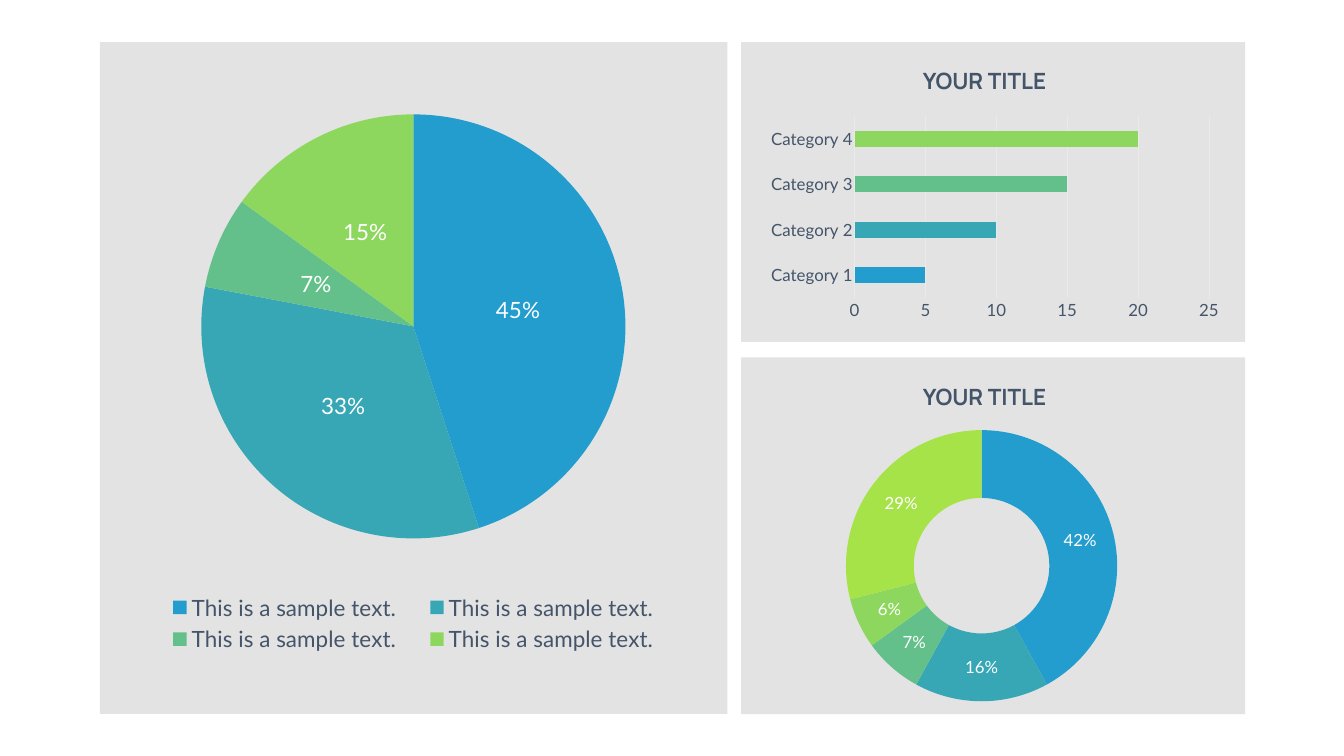
import dataclasses

import pptx
import pptx.chart.data
import pptx.dml.color
import pptx.enum.chart
import pptx.enum.shapes
import pptx.enum.text
import pptx.oxml
import pptx.oxml.ns
import pptx.util

Pt = pptx.util.Pt
RGB = pptx.dml.color.RGBColor.from_string
XL = pptx.enum.chart


@dataclasses.dataclass(frozen=True)
class Theme:
    panel: str = "E3E3E3"
    text: str = "445469"
    label: str = "FFFFFF"
    grid: str = "EAEAEA"
    series: tuple = ("229DCE", "37A7B6", "63C08A", "8ED75E", "A5E348")
    body: str = "Lato"
    heading: str = "Manrope"
    large: int = 32
    small: int = 24


theme = Theme()


def style_font(font, size, color, name=theme.body, bold=False):
    values = {"size": Pt(size), "name": name, "bold": bold}
    for attribute, value in values.items():
        setattr(font, attribute, value)
    font.color.rgb = RGB(color)


def set_layout(parent, index, bounds, target=""):
    """Fix a plot area or legend at x, y, w, h, as fractions of the chart."""
    qn = pptx.oxml.ns.qn
    for old in parent.findall(qn("c:layout")):
        parent.remove(old)
    modes = "".join(f'<c:{axis}Mode val="edge"/>' for axis in "xy")
    sizes = "".join(f'<c:{key} val="{value}"/>' for key, value in zip("xywh", bounds))
    parent.insert(index, pptx.oxml.parse_xml(
        f'<c:layout {pptx.oxml.ns.nsdecls("c")}><c:manualLayout>'
        f"{target}{modes}{sizes}</c:manualLayout></c:layout>"))


deck = pptx.Presentation()
deck.slide_width, deck.slide_height = Pt(1919.5), Pt(1080)
slide = deck.slides.add_slide(deck.slide_layouts[6])

# Panels
for bounds in (
    (1058.4, 510.5, 720, 509.8),
    (1058.4, 60, 720, 428.4),
    (142.6, 60, 896.4, 960),
):
    panel = slide.shapes.add_shape(
        pptx.enum.shapes.MSO_SHAPE.RECTANGLE, *map(Pt, bounds))
    panel.shadow.inherit = False
    panel.fill.solid()
    panel.fill.fore_color.rgb = RGB(theme.panel)
    panel.line.fill.background()

# Charts: kind, bounds, categories, values, text size
chart_specs = {
    "shares": (XL.XL_CHART_TYPE.PIE, (157.7, 131.8, 865.4, 815.8),
               ["This is a sample text."] * 4, (45, 33, 7, 15), theme.large),
    "ring": (XL.XL_CHART_TYPE.DOUGHNUT, (1208.2, 611.3, 395.3, 393.8),
             ["1", "2", "3", "4", "5"], (42, 16, 7, 6, 29), theme.small),
    "bars": (XL.XL_CHART_TYPE.BAR_CLUSTERED, (1087.9, 159.8, 666, 303.8),
             [f"Category {n}" for n in range(1, 5)], (5, 10, 15, 20), theme.small),
}
charts = {}
for part, (kind, bounds, categories, values, size) in chart_specs.items():
    data = pptx.chart.data.CategoryChartData()
    data.categories = categories
    data.add_series("Series 1", values)
    chart = slide.shapes.add_chart(kind, *map(Pt, bounds), data).chart
    charts[part] = chart
    chart.has_title = False
    chart.has_legend = False
    style_font(chart.font, theme.small, theme.text)
    plot = chart.plots[0]
    plot.vary_by_categories = part != "bars"
    for index, color in enumerate(theme.series[:len(values)]):
        fill = plot.series[0].points[index].format.fill
        fill.solid()
        fill.fore_color.rgb = RGB(color)
    if part != "bars":
        plot.has_data_labels = True
        labels = plot.data_labels
        flags = {"show_percentage": True, "show_value": False,
                 "number_format": "0%", "number_format_is_linked": False}
        for attribute, value in flags.items():
            setattr(labels, attribute, value)
        style_font(labels.font, size, theme.label)

inner = '<c:layoutTarget val="inner"/>'
for part, bounds in {"shares": (0.15, 0.02, 0.7, 0.78), "ring": (0, 0, 0.98, 1)}.items():
    set_layout(charts[part].plots[0]._element.getparent(), 0, bounds, inner)

# Pie labels and legend
shares = charts["shares"]
shares.plots[0].data_labels.position = XL.XL_LABEL_POSITION.CENTER
shares.has_legend = True
shares.legend.position = XL.XL_LEGEND_POSITION.BOTTOM
shares.legend.include_in_layout = False
style_font(shares.legend.font, theme.large, theme.text)
set_layout(shares.legend._element, 1, (0.06, 0.87, 0.88, 0.12))

# Bar axes
bars = charts["bars"]
bars.plots[0].gap_width = 182
for axis in (bars.category_axis, bars.value_axis):
    axis.major_tick_mark = axis.minor_tick_mark = XL.XL_TICK_MARK.NONE
    style_font(axis.tick_labels.font, theme.small, theme.text)
scale = {"minimum_scale": 0, "maximum_scale": 25, "major_unit": 5,
         "has_major_gridlines": True}
for attribute, value in scale.items():
    setattr(bars.value_axis, attribute, value)
bars.value_axis.format.line.fill.background()
for line in (bars.category_axis.format.line,
             bars.value_axis.major_gridlines.format.line):
    line.color.rgb = RGB(theme.grid)
    line.width = Pt(0.75)

# Headings
for top in (92.2, 543.6):
    heading = slide.shapes.add_textbox(Pt(1309.7), Pt(top), Pt(193), Pt(46.1))
    frame = heading.text_frame
    frame.word_wrap = False
    frame.auto_size = pptx.enum.text.MSO_AUTO_SIZE.SHAPE_TO_FIT_TEXT
    paragraph = frame.paragraphs[0]
    paragraph.alignment = pptx.enum.text.PP_ALIGN.CENTER
    run = paragraph.add_run()
    run.text = "YOUR TITLE"
    style_font(run.font, theme.large, theme.text, theme.heading, True)

deck.save("out.pptx")
